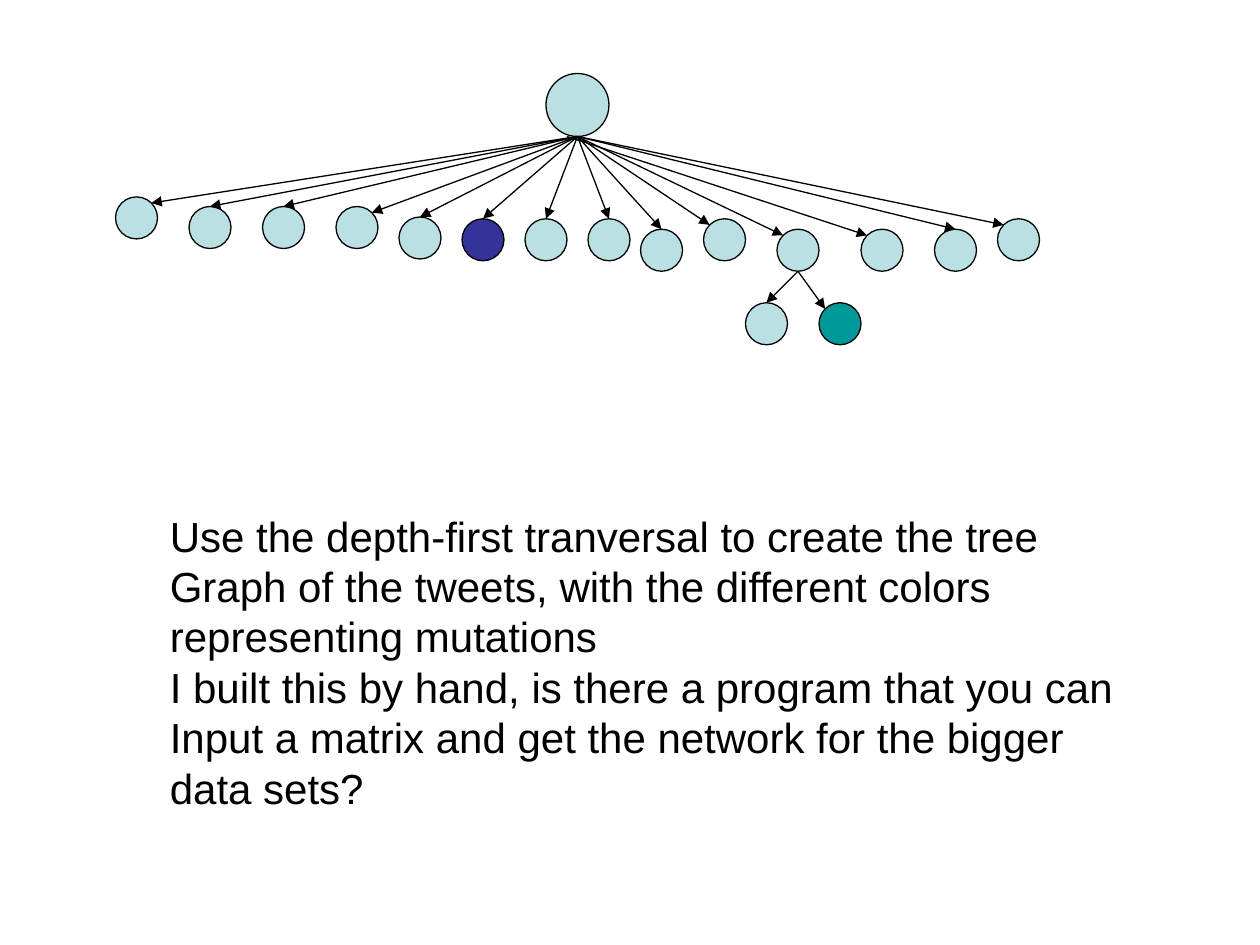
"""Build a slide with a tree of tweets and a note about its colours."""
from dataclasses import dataclass
from math import sqrt

from lxml import etree
from pptx import Presentation
from pptx import util as u
from pptx.dml.color import RGBColor
from pptx.enum import shapes, text
from pptx.oxml.ns import qn


@dataclass(frozen=True)
class Theme:
    tweet: str = "BBE0E3"
    mutation_blue: str = "333399"
    mutation_green: str = "009999"
    ink: str = "000000"
    font: str = "Arial"
    size: float = 24
    leading: float = 28.8
    line: float = 0.75


THEME = Theme()
ROOT = (312, 42, 36)
DIAMETER = 24
TOP, TOP_LEFT, TOP_RIGHT = 0, -1, 1

# left, top, colour, side the arrow reaches, shift of the arrow's start
REPLIES = [
    (66, 112.5, THEME.tweet, TOP_RIGHT, 0),
    (108, 118, THEME.tweet, TOP, 0),
    (150, 118, THEME.tweet, TOP, 0),
    (192, 118, THEME.tweet, TOP_RIGHT, 0),
    (228, 124, THEME.tweet, TOP, 0),
    (264, 125, THEME.mutation_blue, TOP, 0),
    (300, 125, THEME.tweet, TOP, 0),
    (336, 125, THEME.tweet, TOP, 0),
    (366, 131, THEME.tweet, TOP, 0),
    (402, 125, THEME.tweet, TOP_LEFT, 0),
    (444, 131, THEME.tweet, TOP_LEFT, 0),
    (492, 131, THEME.tweet, TOP_LEFT, -6),
    (534, 131, THEME.tweet, TOP, 0),
    (570, 125, THEME.tweet, TOP_LEFT, 0),
]
BRANCH = 10
BRANCH_REPLIES = [
    (426, 173, THEME.tweet, TOP, 0),
    (468, 173, THEME.mutation_green, TOP_LEFT, 0),
]
NOTE = [
    "Use the depth-first tranversal to create the tree",
    "Graph of the tweets, with the different colors",
    "representing mutations",
    "I built this by hand, is there a program that you can",
    "Input a matrix and get the network for the bigger",
    "data sets?",
]
NOTE_BOX = (90, 288, 554, 180)


def add_node(slide, left, top, diameter, colour):
    shape = slide.shapes.add_shape(
        shapes.MSO_SHAPE.OVAL, *map(u.Pt, (left, top, diameter, diameter)))
    shape.shadow.inherit = False
    shape.fill.solid()
    shape.fill.fore_color.rgb = RGBColor.from_string(colour)
    shape.line.color.rgb = RGBColor.from_string(THEME.ink)
    shape.line.width = u.Pt(THEME.line)


def add_arrow(slide, start, end):
    connector = slide.shapes.add_connector(
        shapes.MSO_CONNECTOR.STRAIGHT, *map(u.Pt, (*start, *end)))
    connector.line.color.rgb = RGBColor.from_string(THEME.ink)
    connector.line.width = u.Pt(THEME.line)
    etree.SubElement(connector.line._get_or_add_ln(), qn("a:tailEnd"), type="triangle")
    etree.SubElement(connector._element.spPr, qn("a:effectLst"))


def add_replies(slide, parent, replies):
    left, top, diameter = parent
    radius = DIAMETER / 2
    for x, y, colour, _, _ in replies:
        add_node(slide, x, y, DIAMETER, colour)
    for x, y, _, side, shift in replies:
        start = (left + diameter / 2 + shift, top + diameter)
        rise = radius / sqrt(2) if side else radius
        end = (x + radius + side * rise, y + radius - rise)
        add_arrow(slide, start, end)


def add_note(slide):
    frame = slide.shapes.add_textbox(*map(u.Pt, NOTE_BOX)).text_frame
    frame.word_wrap = False
    frame.auto_size = text.MSO_AUTO_SIZE.SHAPE_TO_FIT_TEXT
    frame.text = "\n".join(NOTE)
    for paragraph in frame.paragraphs:
        paragraph.line_spacing = u.Pt(THEME.leading)
        paragraph.font.name = THEME.font
        paragraph.font.size = u.Pt(THEME.size)
        paragraph.font.color.rgb = RGBColor.from_string(THEME.ink)


def main():
    presentation = Presentation()
    presentation.slide_width, presentation.slide_height = u.Pt(720), u.Pt(540)
    slide = presentation.slides.add_slide(presentation.slide_layouts[6])
    add_node(slide, *ROOT, THEME.tweet)
    add_replies(slide, ROOT, REPLIES)
    add_replies(slide, (*REPLIES[BRANCH][:2], DIAMETER), BRANCH_REPLIES)
    add_note(slide)
    presentation.save("out.pptx")


if __name__ == "__main__":
    main()
